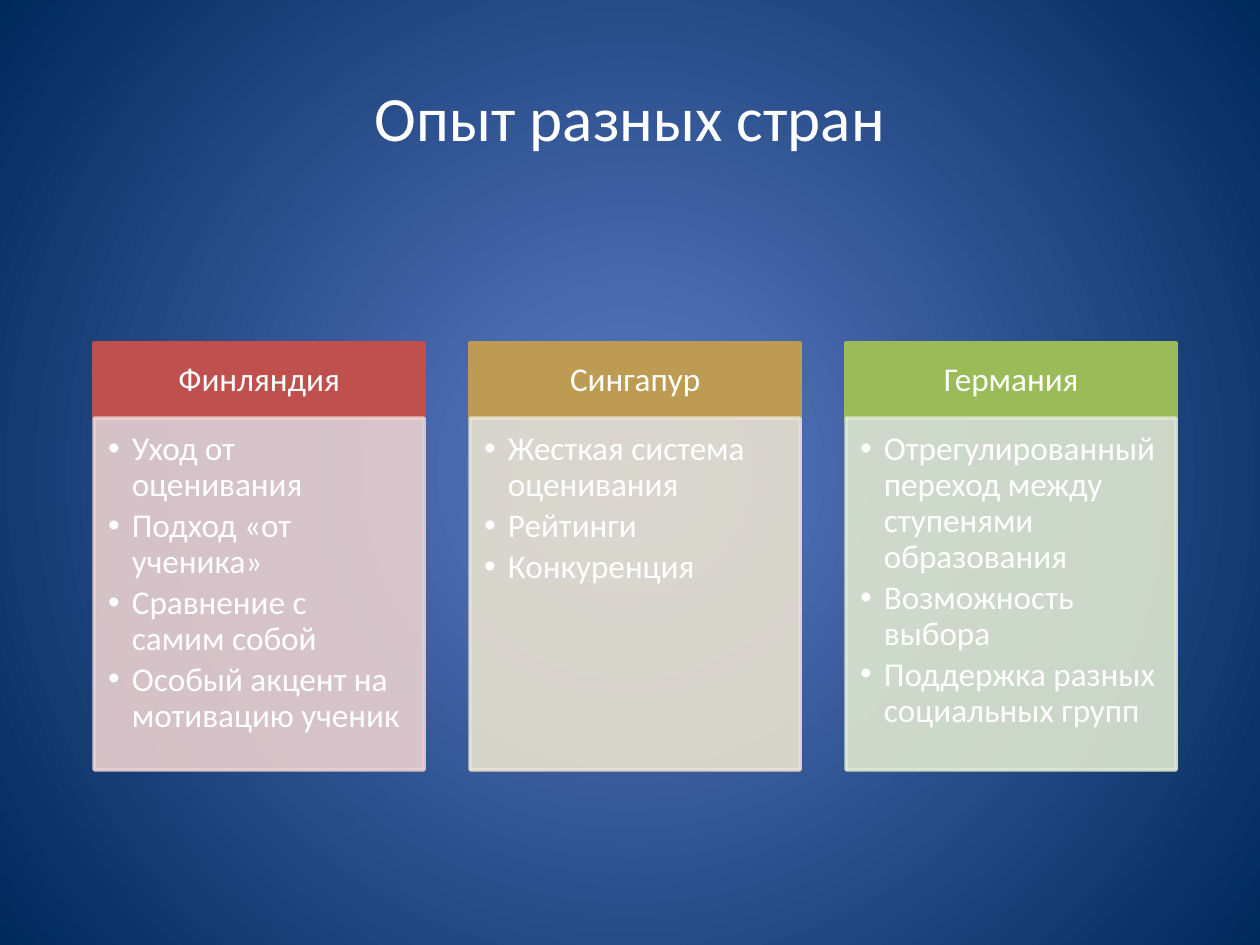
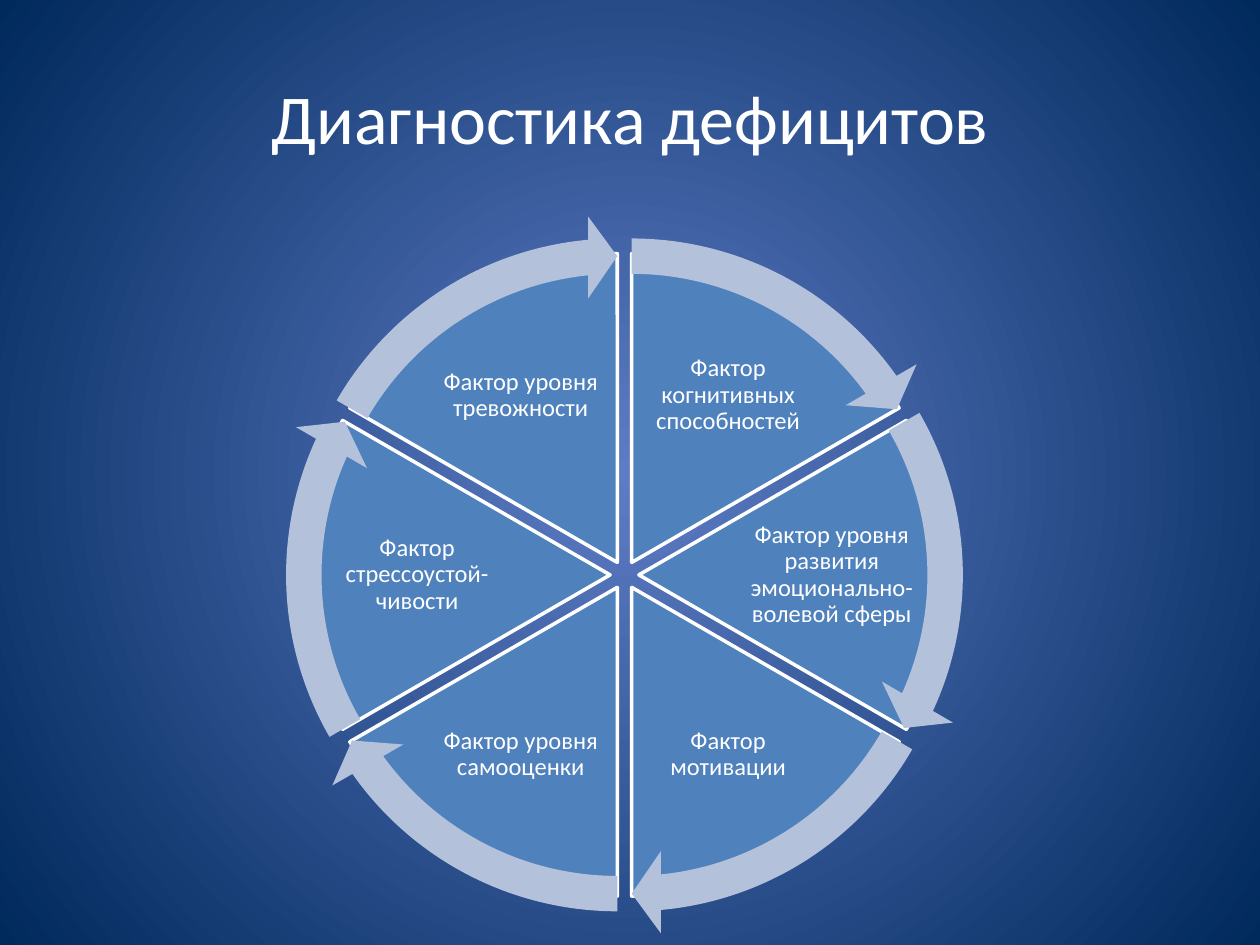
import math
from dataclasses import dataclass

import pptx
import pptx.dml.color
import pptx.enum.shapes
import pptx.enum.text
import pptx.oxml
import pptx.oxml.ns
import pptx.util

Cm = pptx.util.Cm
Pt = pptx.util.Pt
qn = pptx.oxml.ns.qn
SHAPE = pptx.enum.shapes.MSO_SHAPE
ALIGN = pptx.enum.text.PP_ALIGN
ANCHOR = pptx.enum.text.MSO_ANCHOR


@dataclass(frozen=True)
class Theme:
    font: str = "Calibri"
    text: str = "FFFFFF"
    glow: str = "5E7CC5"
    edge: str = "00295C"
    slice: str = "4F81BD"
    arrow: str = "B3C1DB"
    card: int = 19
    label: int = 14
    line: int = 2
    tight: float = 0.9


COUNTRIES = [
    ("Финляндия", "C0504D", "E8D0D0",
     ["Уход от оценивания", "Подход «от ученика»",
      "Сравнение с самим собой", "Особый акцент на мотивацию ученик"]),
    ("Сингапур", "BD9B53", "E8E1D1",
     ["Жесткая система оценивания", "Рейтинги", "Конкуренция"]),
    ("Германия", "9BBB59", "DEE7D1",
     ["Отрегулированный переход между ступенями образования",
      "Возможность выбора", "Поддержка разных социальных групп"]),
]

FACTORS = [
    "Фактор когнитивных способностей",
    "Фактор уровня развития эмоционально-волевой сферы",
    "Фактор мотивации",
    "Фактор уровня самооценки",
    "Фактор стрессоустой-чивости",
    "Фактор уровня тревожности",
]


def rgb(code):
    return pptx.dml.color.RGBColor.from_string(code)


def node(tag, attrs, inner=""):
    """Drawing element with the given attributes and content."""
    space = pptx.oxml.ns.nsdecls("a")
    return pptx.oxml.parse_xml(f"<a:{tag} {space} {attrs}>{inner}</a:{tag}>")


def around(x, y, w, h):
    """Box of size w by h centred on (x, y)."""
    return x - w / 2, y - h / 2, w, h


class Deck:
    def __init__(self, theme):
        self.theme = theme
        self.prs = pptx.Presentation()
        self.prs.slide_width = Cm(25.4)
        self.prs.slide_height = Cm(19.05)
        self.slide = None

    def page(self, title, size):
        self.slide = self.prs.slides.add_slide(self.prs.slide_layouts[6])
        self.glow()
        box = self.box((1.27, 0.76, 22.86, 3.18))
        self.label(box, [title], size, (0.25, 0.13, 0.25, 0.13), space=1)

    def glow(self):
        """Fill the background with a radial gradient."""
        fill = self.slide.background.fill
        fill.gradient()
        for stop, code in zip(fill.gradient_stops, (self.theme.glow, self.theme.edge)):
            stop.color.rgb = rgb(code)
        lin = next(self.slide.element.iter(qn("a:lin")))
        rect = '<a:fillToRect l="100000" t="100000" r="100000" b="100000"/>'
        lin.getparent().replace(lin, node("path", 'path="circle"', rect))

    def box(self, area):
        return self.slide.shapes.add_textbox(*map(Cm, area))

    def shape(self, kind, area, fill, line=None, adjust=(), alpha=None):
        item = self.slide.shapes.add_shape(kind, *map(Cm, area))
        item.shadow.inherit = False
        for i, value in enumerate(adjust):
            item.adjustments[i] = value
        item.fill.solid()
        item.fill.fore_color.rgb = rgb(fill)
        if line:
            item.line.color.rgb = rgb(line)
            item.line.width = Pt(self.theme.line)
        else:
            item.line.fill.background()
        if alpha:
            for color in list(item.element.spPr.iter(qn("a:srgbClr"))):
                color.append(node("alpha", f'val="{alpha * 1000}"'))
        return item

    def label(self, item, lines, size, inset, space=None, bullet=False):
        frame = item.text_frame
        frame.word_wrap = True
        frame.vertical_anchor = ANCHOR.TOP if bullet else ANCHOR.MIDDLE
        (frame.margin_left, frame.margin_top,
         frame.margin_right, frame.margin_bottom) = map(Cm, inset)
        for i, line in enumerate(lines):
            para = frame.add_paragraph() if i else frame.paragraphs[0]
            para.text = line
            para.alignment = ALIGN.LEFT if bullet else ALIGN.CENTER
            para.line_spacing = space or self.theme.tight
            font = para.runs[0].font
            font.name = self.theme.font
            font.size = Pt(size)
            font.color.rgb = rgb(self.theme.text)
            if bullet:
                para.space_after = Pt(size * 0.15)
                self.dot(para)

    def dot(self, para):
        """Give the paragraph a hanging bullet."""
        props = para._p.get_or_add_pPr()
        props.set("marL", str(Cm(0.48)))
        props.set("indent", str(-Cm(0.48)))
        props.append(node("buFont", 'typeface="Arial"'))
        props.append(node("buChar", 'char="•"'))

    def card(self, left, name, dark, pale, points):
        top, wide, head, body = 6.91, 6.65, 1.52, 7.09
        size = self.theme.card
        cap = self.shape(SHAPE.RECTANGLE, (left, top, wide, head), dark, dark)
        self.label(cap, [name], size, (0.38, 0.2, 0.38, 0.2))
        area = (left, top + head, wide, body)
        base = self.shape(SHAPE.RECTANGLE, area, pale, pale, alpha=90)
        self.label(base, points, size, (0.28, 0.28, 0.38, 0.43), bullet=True)

    def wheel(self, x, y, names):
        """Ring of slices, clockwise from the top, each with an arrow."""
        turn = 216  # full circle in adjustment units
        step = turn / len(names)
        tip = 3.275
        arrows = []
        for i, name in enumerate(names):
            start = (turn * 0.75 + i * step) % turn
            end = (start + step) % turn
            angle = math.tau * (start + step / 2) / turn
            dx, dy = math.cos(angle), math.sin(angle)
            mid = (x + 0.29 * dx, y + 0.29 * dy)
            self.shape(SHAPE.PIE, around(*mid, 12.45, 12.45), self.theme.slice,
                       self.theme.text, (start, end))
            box = self.box(around(x + 4.18 * dx, y + 4.18 * dy, 3.4, 2.5))
            self.label(box, [name], self.theme.label, (0.05,) * 4)
            arrows.append((mid, (0.051, tip, end - tip, start, 0.059)))
        for mid, adjust in arrows:
            self.shape(SHAPE.CIRCULAR_ARROW, around(*mid, 14, 14),
                       self.theme.arrow, adjust=adjust)


def main():
    deck = Deck(Theme())
    deck.page("Опыт разных стран", 36)
    for i, country in enumerate(COUNTRIES):
        deck.card(1.9 + i * 7.58, *country)
    deck.page("Диагностика дефицитов", 40)
    deck.wheel(12.59, 11.59, FACTORS)
    deck.prs.save("out.pptx")


if __name__ == "__main__":
    main()
